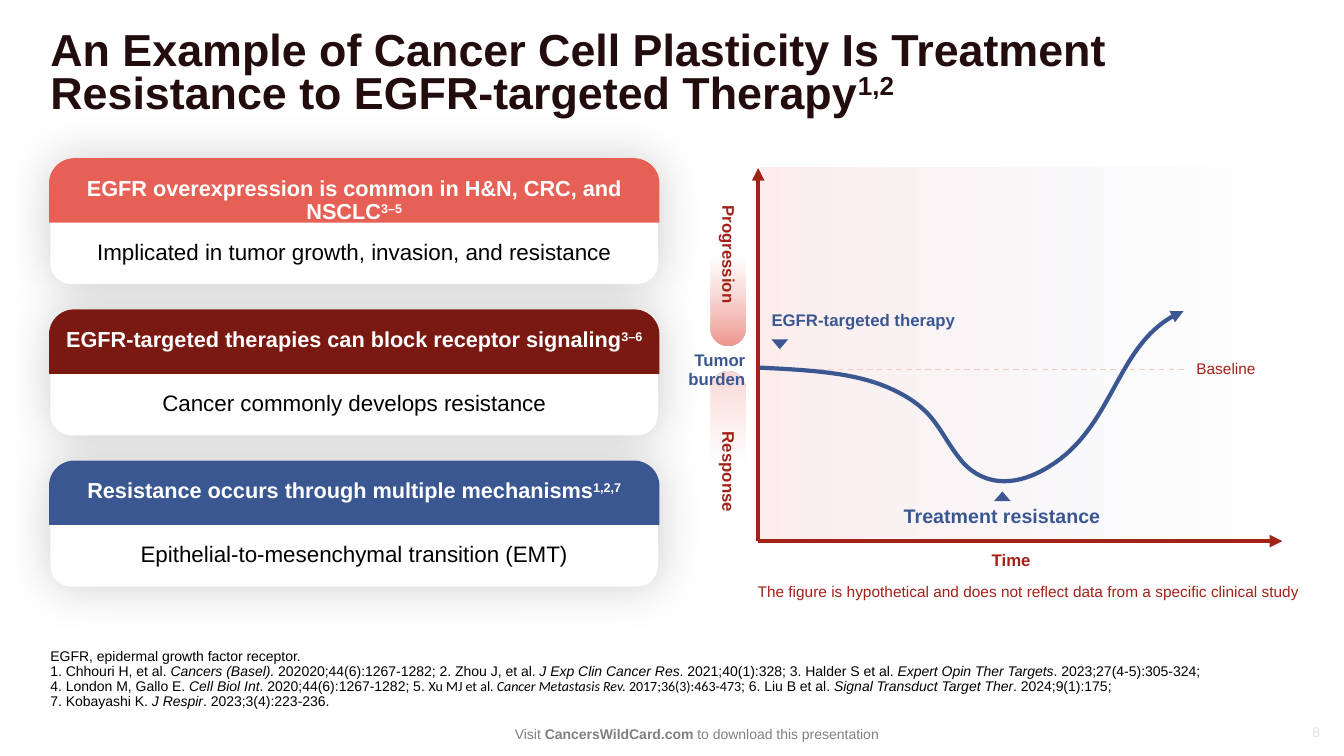
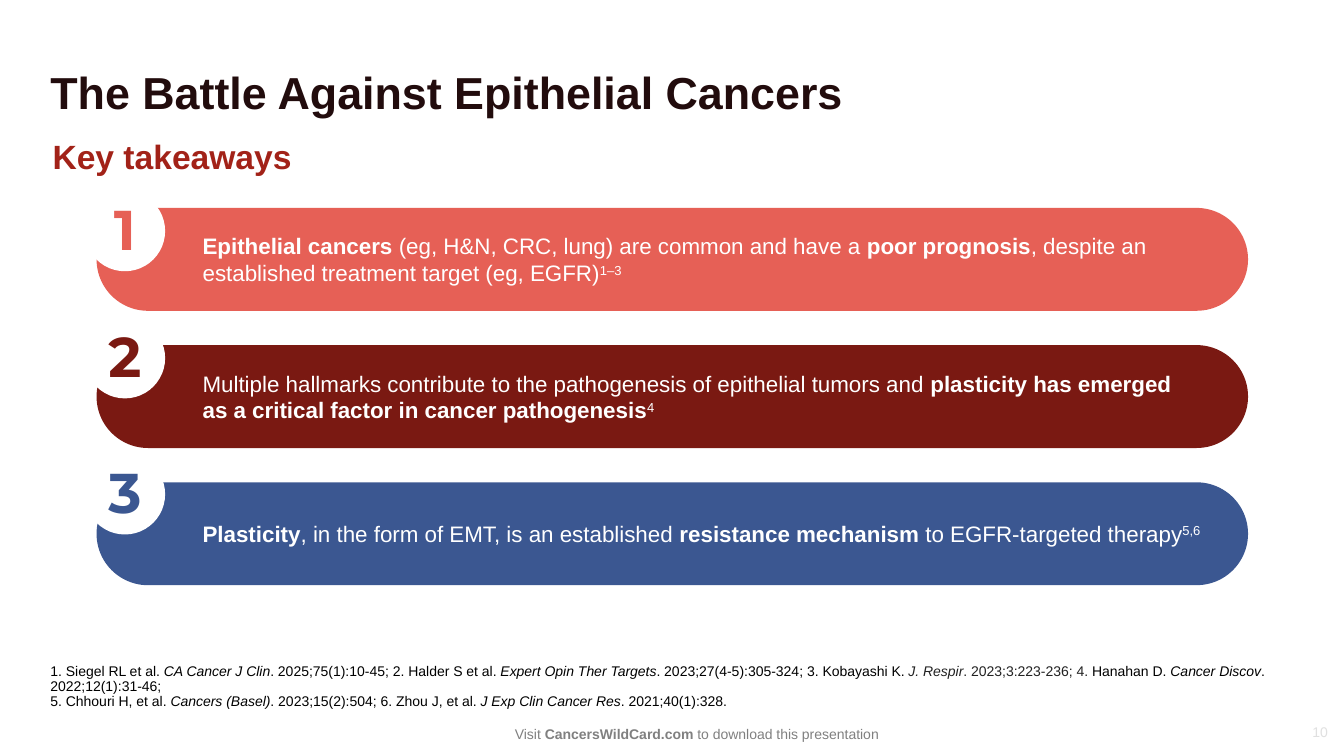
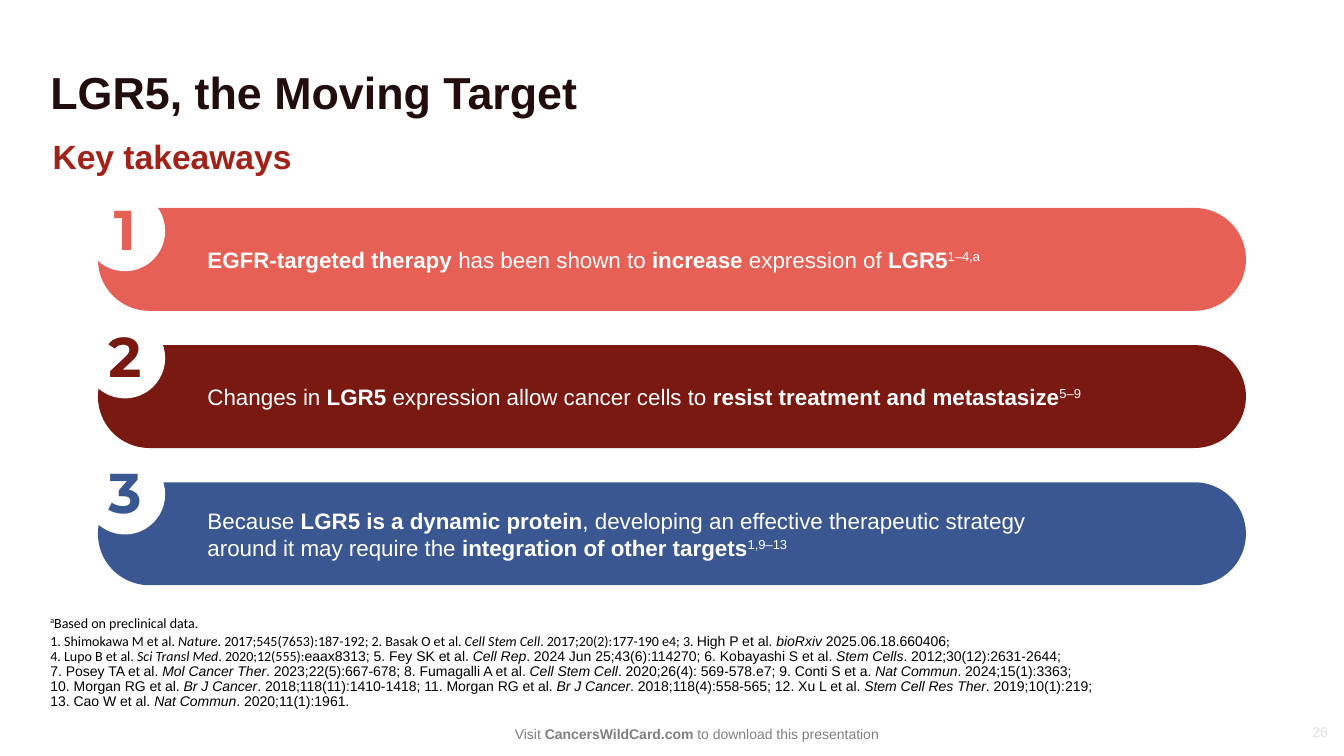
from dataclasses import dataclass, replace
from copy import deepcopy

from lxml import etree
from pptx import Presentation
from pptx.dml.color import RGBColor
from pptx.enum.dml import MSO_LINE
from pptx.enum.shapes import MSO_CONNECTOR, MSO_SHAPE
from pptx.enum.text import MSO_ANCHOR, MSO_AUTO_SIZE, PP_ALIGN
from pptx.oxml.ns import qn
from pptx.util import Pt

LEFT, CENTER, RIGHT = PP_ALIGN.LEFT, PP_ALIGN.CENTER, PP_ALIGN.RIGHT
TOP, MIDDLE, BOTTOM = MSO_ANCHOR.TOP, MSO_ANCHOR.MIDDLE, MSO_ANCHOR.BOTTOM
RECTANGLE, ELLIPSE = MSO_SHAPE.RECTANGLE, MSO_SHAPE.OVAL
ROUNDED, TRIANGLE = MSO_SHAPE.ROUNDED_RECTANGLE, MSO_SHAPE.ISOSCELES_TRIANGLE
ROUND_TOP = MSO_SHAPE.ROUND_2_SAME_RECTANGLE
DASH, STRAIGHT = MSO_LINE.DASH, MSO_CONNECTOR.STRAIGHT
GROW, FIXED = MSO_AUTO_SIZE.SHAPE_TO_FIT_TEXT, MSO_AUTO_SIZE.NONE
TITLE_ONLY = 5
DEFAULT_INSETS = (7.2, 3.6, 7.2, 3.6)
NO_INSETS = (0, 0, 0, 0)


@dataclass(frozen=True)
class Theme:
    """Colours, fonts and type sizes of the deck."""
    coral: str = "E66056"
    maroon: str = "7A1912"
    blue: str = "3B5791"
    red: str = "A22218"
    ink: str = "220C0D"
    black: str = "000000"
    charcoal: str = "222222"
    grey: str = "808080"
    pale_grey: str = "E0E0E0"
    white: str = "FFFFFF"
    blush: str = "FADAD8"
    rose: str = "F5B5B0"
    deep_rose: str = "EE958E"
    baseline: str = "F7CAC7"
    ice: str = "D4DCED"
    font: str = "Arial"
    reference_font: str = "Calibri"
    number_font: str = "Montserrat"
    title_size: float = 32
    subtitle_size: float = 24
    number_size: float = 40
    body_size: float = 16
    header_size: float = 15.5
    callout_size: float = 14
    label_size: float = 12
    caption_size: float = 11
    small_size: float = 10


THEME = Theme()
ACCENTS = (THEME.coral, THEME.maroon, THEME.blue)


@dataclass(frozen=True)
class Style:
    """Look of the text in one frame."""
    size: float
    color: str
    bold: bool = False
    font: str = THEME.font
    align: PP_ALIGN = LEFT
    spacing: float = 1.0
    anchor: MSO_ANCHOR = TOP
    insets: tuple = DEFAULT_INSETS


@dataclass(frozen=True)
class Box:
    """Rectangle in points."""
    left: float
    top: float
    width: float
    height: float

    def inner(self, left, top, width, height):
        """Return a box placed relative to this one."""
        return Box(self.left + left, self.top + top, width, height)

    def lengths(self):
        """Return left, top, width and height as lengths."""
        return Pt(self.left), Pt(self.top), Pt(self.width), Pt(self.height)


TITLE = Style(THEME.title_size, THEME.ink, True, spacing=0.79, anchor=BOTTOM, insets=NO_INSETS)
SUBTITLE = Style(THEME.subtitle_size, THEME.red, True, spacing=0.9, insets=NO_INSETS)
FOOTNOTE = Style(THEME.small_size, THEME.black, spacing=0.9, anchor=BOTTOM, insets=NO_INSETS)
FOOTER = Style(THEME.small_size, THEME.grey, align=CENTER, anchor=BOTTOM, insets=(0, 3.6, 7.2, 3.6))
PAGE_NUMBER = Style(THEME.small_size, THEME.pale_grey, anchor=MIDDLE, insets=NO_INSETS)
CARD_BODY = Style(THEME.body_size, THEME.black, align=CENTER, anchor=BOTTOM,
                  insets=(14.4, 14.4, 14.4, 9.4))
CARD_HEADER = Style(THEME.header_size, THEME.white, True, align=CENTER, spacing=0.9,
                    insets=(3, 8.8, 3, 0))
AXIS_LABEL = Style(THEME.label_size, THEME.red, True, spacing=0.95)
CURVE_LABEL = replace(AXIS_LABEL, color=THEME.blue)
CALLOUT = replace(CURVE_LABEL, size=THEME.callout_size, align=CENTER)
CAPTION = Style(THEME.caption_size, THEME.red, spacing=0.95)
NUMBER = Style(THEME.number_size, THEME.white, True, THEME.number_font, CENTER, 0.95, MIDDLE)
TAKEAWAY = Style(THEME.body_size, THEME.white, anchor=MIDDLE)


def write_runs(paragraph, text, style):
    """Write marked text: * bold, _ italic, ^ raised, ~ second font, ` charcoal."""
    active = dict.fromkeys("*_^~`", False)
    pending = ""
    for character in text + "\0":
        if character not in active and character not in "\n\0":
            pending += character
            continue
        if pending:
            run = paragraph.add_run()
            run.text = pending
            run.font.size = Pt(style.size)
            run.font.name = THEME.reference_font if active["~"] else style.font
            run.font.bold = style.bold != active["*"]
            run.font.italic = active["_"]
            color = THEME.charcoal if active["`"] else style.color
            run.font.color.rgb = RGBColor.from_string(color)
            if active["^"]:
                run._r.get_or_add_rPr().set("baseline", "30000")
            pending = ""
        if character == "\n":
            paragraph.add_line_break()
            paragraph._p[-1].insert(0, deepcopy(run._r.rPr))
        elif character in active:
            active[character] = not active[character]


def write_frame(text_frame, texts, style, grow=False, wrap=True):
    """Fill a text frame with one paragraph for each text."""
    text_frame.word_wrap = wrap
    text_frame.auto_size = GROW if grow else FIXED
    text_frame.vertical_anchor = style.anchor
    (text_frame.margin_left, text_frame.margin_top,
     text_frame.margin_right, text_frame.margin_bottom) = map(Pt, style.insets)
    for index, text in enumerate(texts):
        paragraph = text_frame.add_paragraph() if index else text_frame.paragraphs[0]
        paragraph.alignment = style.align
        paragraph.line_spacing = style.spacing
        paragraph.space_before = Pt(2 if index else 0)
        write_runs(paragraph, text, style)


def add_text(slide, box, text, style, grow=True, wrap=True):
    """Add a text box with one paragraph."""
    shape = slide.shapes.add_textbox(*box.lengths())
    write_frame(shape.text_frame, [text], style, grow, wrap)


def add_shape(slide, kind, box, color=None, adjustments=(), rotation=0):
    """Add a flat preset shape without an outline."""
    shape = slide.shapes.add_shape(kind, *box.lengths())
    shape.rotation = rotation
    shape.shadow.inherit = False
    shape.line.fill.background()
    for index, value in enumerate(adjustments):
        shape.adjustments[index] = value
    if color:
        shape.fill.solid()
        shape.fill.fore_color.rgb = RGBColor.from_string(color)
    return shape


def add_alpha(color_element, percent):
    """Set the opacity of a colour element."""
    etree.SubElement(color_element, qn("a:alpha")).set("val", str(percent * 1000))


def fill_gradient(shape, stops, angle=0):
    """Fill a shape with two stops of position, colour and opacity."""
    shape.fill.gradient()
    shape.fill.gradient_angle = angle
    for stop, (position, color, _) in zip(shape.fill.gradient_stops, stops):
        stop.position = position
        stop.color.rgb = RGBColor.from_string(color)
    colors = shape._element.spPr.iter(qn("a:srgbClr"))
    for color_element, (_, _, opacity) in zip(list(colors), stops):
        add_alpha(color_element, opacity)


def add_glow_shadow(shape):
    """Give a shape a soft shadow on all sides."""
    effects = shape._element.spPr.find(qn("a:effectLst"))
    shadow = etree.SubElement(effects, qn("a:outerShdw"), blurRad=str(int(Pt(35))), dist="0",
                              dir="0", algn="ctr", rotWithShape="0")
    add_alpha(etree.SubElement(shadow, qn("a:srgbClr"), val=THEME.black), 20)


def format_line(line, color, width, arrow=False):
    """Set colour, width and end arrow of a line."""
    line.color.rgb = RGBColor.from_string(color)
    line.width = Pt(width)
    if arrow:
        etree.SubElement(line._get_or_add_ln(), qn("a:tailEnd"), type="triangle")


def add_line(slide, box, color, width, arrow=False, dash=None):
    """Add a straight line from the start of a box by its signed width and height."""
    line = slide.shapes.add_connector(
        STRAIGHT, Pt(box.left), Pt(box.top), Pt(box.left + box.width), Pt(box.top + box.height))
    if dash:
        line.line.dash_style = dash
    format_line(line.line, color, width, arrow)
    etree.SubElement(line._element.spPr, qn("a:effectLst"))


def add_curve(slide, box, points):
    """Add an arrow of cubic curves: a start, then three points for each curve."""
    vertices = [(Pt(box.left + x), Pt(box.top + y)) for x, y in points]
    builder = slide.shapes.build_freeform(*vertices[0])
    builder.add_line_segments(vertices[1:], close=False)
    curve = builder.convert_to_shape()
    curve.shadow.inherit = False
    curve.fill.background()
    format_line(curve.line, THEME.blue, 3, arrow=True)
    outline = curve._element.find(".//" + qn("a:path"))
    segments = outline.findall(qn("a:lnTo"))
    for index in range(0, len(segments), 3):
        cubic = etree.SubElement(outline, qn("a:cubicBezTo"))
        for segment in segments[index:index + 3]:
            cubic.append(segment[0])
            outline.remove(segment)


def add_slide(presentation, title, title_lines, number, footnotes):
    """Add a slide with its title, references, footer and page number."""
    slide = presentation.slides.add_slide(presentation.slide_layouts[TITLE_ONLY])
    placeholder = slide.shapes.title
    height = 31 * title_lines
    box = Box(36, 84 - height, 900, height)
    placeholder.left, placeholder.top, placeholder.width, placeholder.height = box.lengths()
    write_frame(placeholder.text_frame, [title], TITLE, grow=True)
    references = slide.shapes.add_textbox(*Box(36, 478, 888, 29).lengths())
    write_frame(references.text_frame, footnotes, FOOTNOTE)
    add_text(slide, Box(317, 514, 368.5, 19.5),
             "Visit *CancersWildCard.com* to download this presentation", FOOTER)
    add_text(slide, Box(937.5, 513, 22, 20), number, PAGE_NUMBER, grow=False)
    return slide


def add_cards(slide, box, cards):
    """Stack cards of a coloured header over a white body."""
    step = 108
    for index, (_, body) in reversed(list(enumerate(cards))):
        card = add_shape(slide, ROUNDED, box.inner(0, index * step, box.width, 90), THEME.white)
        add_glow_shadow(card)
        write_frame(card.text_frame, [body], CARD_BODY)
    for index, (header, _) in enumerate(cards):
        band = add_shape(slide, ROUND_TOP, box.inner(-1, index * step, box.width + 2, 46),
                         ACCENTS[index], (0.39, 0))
        write_frame(band.text_frame, [header], CARD_HEADER)


def add_response_figure(slide, plot):
    """Draw tumor burden over time around a plot area."""
    backdrop = add_shape(slide, RECTANGLE, plot)
    fill_gradient(backdrop, [(0, THEME.blush, 47), (1, THEME.ice, 0)])
    add_shape(slide, TRIANGLE, plot.inner(8, 122.4, 12, 7), THEME.blue, rotation=180)
    add_shape(slide, TRIANGLE, plot.inner(167, 231, 12, 7), THEME.blue)
    add_text(slide, plot.inner(158, 270.5, 42.5, 21), "Time",
             replace(AXIS_LABEL, align=CENTER), wrap=False)
    add_text(slide, plot.inner(1, 98.5, 184, 21), "EGFR-targeted therapy", CURVE_LABEL)
    add_text(slide, plot.inner(83.5, 237.5, 178.5, 23), "Treatment resistance", CALLOUT)
    add_text(slide, plot.inner(304.5, 134, 57.5, 20), "Baseline", CAPTION, wrap=False)
    pills = (
        ("Progression", 59, LEFT, THEME.rose, THEME.deep_rose, 0),
        ("Response", 188.5, RIGHT, THEME.blush, THEME.blush, 180),
    )
    for label, top, align, faint, strong, angle in pills:
        pill = add_shape(slide, ROUNDED, plot.inner(-78.5, top, 111, 25), None, (0.5,), 90)
        fill_gradient(pill, [(0.42, faint, 0), (1, strong, 100)], angle)
        write_frame(pill.text_frame, [label], replace(AXIS_LABEL, align=align, anchor=MIDDLE))
    add_line(slide, plot.inner(0, 144, 304.5, 0), THEME.baseline, 1, dash=DASH)
    add_curve(slide, plot, [
        (0, 142.6), (43.2, 144.7), (73.4, 146.9), (99.4, 160.6),
        (125.3, 174.2), (127.4, 187.9), (141.8, 206.6),
        (156.2, 226.1), (180.7, 230.4), (208.8, 211.7),
        (252, 183.6), (254.9, 121.7), (302.4, 102.2)])
    add_line(slide, plot.inner(-1.4, plot.height, 0, -plot.height), THEME.red, 3, arrow=True)
    add_line(slide, plot.inner(-1.4, plot.height, 374.4, 0), THEME.red, 3, arrow=True)
    add_text(slide, plot.inner(-59, 127.5, 55.5, 34.5), "Tumor burden",
             replace(CURVE_LABEL, align=RIGHT))
    add_text(slide, plot.inner(-11, 292.5, 405.5, 21),
             "The figure is hypothetical and does not reflect data from a specific clinical study",
             replace(CAPTION, align=CENTER, spacing=1.0))


def add_takeaways(slide, box, text_inset, takeaways):
    """Add the subtitle and numbered bars, each with its text and right inset."""
    add_text(slide, Box(37.5, 100, 888, 26), "Key takeaways", SUBTITLE)
    badge_offsets = (-12.2, -19.4, -20.2)
    for index, (text, right_inset) in enumerate(takeaways):
        bar_top = index * 98
        bar = add_shape(slide, ROUNDED, box.inner(0, bar_top, box.width, 73.5),
                        ACCENTS[index], (0.5,))
        insets = (text_inset, 3.6, right_inset, 3.6)
        write_frame(bar.text_frame, [text], replace(TAKEAWAY, insets=insets))
        badge_box = Box(60.5, box.top + bar_top + badge_offsets[index], 57.5, 57.5)
        badge = add_shape(slide, ELLIPSE, badge_box, THEME.white)
        write_frame(badge.text_frame, [str(index + 1)], replace(NUMBER, color=ACCENTS[index]))


def build_resistance_slide(presentation):
    """Build the slide on resistance to targeted therapy."""
    slide = add_slide(
        presentation,
        "An Example of Cancer Cell Plasticity Is Treatment Resistance to EGFR-targeted Therapy^1,2^",
        2, "8",
        ["EGFR, epidermal growth factor receptor.\n"
         "1. Chhouri H, et al. _Cancers (Basel). _202020;44(6):1267-1282; 2. Zhou J, et al. "
         "_J Exp Clin Cancer Res_. 2021;40(1):328; 3. Halder S et al. "
         "_Expert Opin Ther Targets_. 2023;27(4-5):305-324; \n"
         "4. London M, Gallo E. _Cell Biol Int_. 2020;44(6):1267-1282; 5. "
         "~Xu MJ et al. _Cancer Metastasis Rev. _2017;36(3):463-473~; 6. Liu B et al. "
         "_Signal Transduct Target Ther_. 2024;9(1):175; \n"
         "7. Kobayashi K. _J Respir_. 2023;3(4):223-236."])
    add_cards(slide, Box(36, 113, 434, 306), [
        ("EGFR overexpression is common in H&N, CRC, and NSCLC^3–5^",
         "Implicated in tumor growth, invasion, and resistance"),
        ("EGFR-targeted therapies can block receptor signaling^3–6^",
         "Cancer commonly develops resistance"),
        ("Resistance occurs through multiple mechanisms^1,2,7^",
         "Epithelial-to-mesenchymal transition (EMT)"),
    ])
    add_response_figure(slide, Box(543, 120, 363.5, 266.5))


def build_battle_slide(presentation):
    """Build the takeaways on epithelial cancers."""
    slide = add_slide(
        presentation, "The Battle Against Epithelial Cancers", 1, "10",
        ["1. Siegel RL et al. _CA Cancer J Clin_. 2025;75(1):10-45; 2. Halder S et al. "
         "_Expert Opin Ther Targets_. 2023;27(4-5):305-324; 3. Kobayashi K. "
         "`_J. Respir_. 2023;3:223-236; 4. `Hanahan D. _Cancer Discov_. 2022;12(1):31-46; \n"
         "5. Chhouri H, et al. _Cancers (Basel)_. 2023;15(2):504; 6. Zhou J, et al. "
         "_J Exp Clin Cancer Res_. 2021;40(1):328."])
    add_takeaways(slide, Box(69, 148.5, 822.5, 270), 65, [
        ("*Epithelial cancers *(eg, H&N, CRC, lung) are common and have a *poor prognosis*, "
         "despite an established treatment target (eg, EGFR)^1–3^", 29),
        ("Multiple hallmarks contribute to the pathogenesis of epithelial tumors and "
         "*plasticity has emerged as a critical factor in cancer pathogenesis*^4^", 29),
        ("*Plasticity*, in the form of EMT, is an established *resistance mechanism *"
         "to EGFR-targeted therapy^5,6^", 14.5),
    ])


def build_target_slide(presentation):
    """Build the takeaways on LGR5."""
    slide = add_slide(
        presentation, "LGR5, the Moving Target", 1, "26",
        ["~^a^Based on preclinical data.",
         "~1. Shimokawa M et al. _Nature_. 2017;545(7653):187-192; 2. Basak O et al. "
         "_Cell Stem Cell_. 2017;20(2):177-190 e4; 3. ~High P et al. "
         "_bioRxiv_ 2025.06.18.660406~;\n"
         "4. Lupo B et al. _Sci Transl Med_. 2020;12(555):~eaax8313; 5. Fey SK et al. "
         "_Cell Rep_. 2024 Jun 25;43(6):114270; 6. Kobayashi S et al. "
         "_Stem Cells_. 2012;30(12):2631-2644;\n"
         "7. Posey TA et al. _Mol Cancer Ther_. 2023;22(5):667-678; 8. Fumagalli A et al. "
         "_Cell Stem Cell_. 2020;26(4): 569-578.e7; 9. Conti S et a. "
         "_Nat Commun_. 2024;15(1):3363;\n"
         "10. Morgan RG et al. _Br J Cancer_. 2018;118(11):1410-1418; 11. Morgan RG et al. "
         "_Br J Cancer_. 2018;118(4):558-565; 12. Xu L et al. "
         "_Stem Cell Res Ther_. 2019;10(1):219;\n"
         "13. Cao W et al. _Nat Commun_. 2020;11(1):1961."])
    add_takeaways(slide, Box(70, 148.5, 820, 270), 67.5, [
        ("*EGFR-targeted therapy *has been shown to *increase* expression of *LGR5*^1–4,a^", 29),
        ("Changes in *LGR5* expression allow cancer cells to "
         "*resist treatment and metastasize*^5–9^", 29),
        ("Because *LGR5 is a dynamic protein*, developing an effective therapeutic strategy \n"
         "around it may require the *integration of other targets*^1,9–13^", 29),
    ])


def main():
    """Build and save the deck."""
    presentation = Presentation()
    presentation.slide_width, presentation.slide_height = Pt(960), Pt(540)
    build_resistance_slide(presentation)
    build_battle_slide(presentation)
    build_target_slide(presentation)
    presentation.save("out.pptx")


if __name__ == "__main__":
    main()
